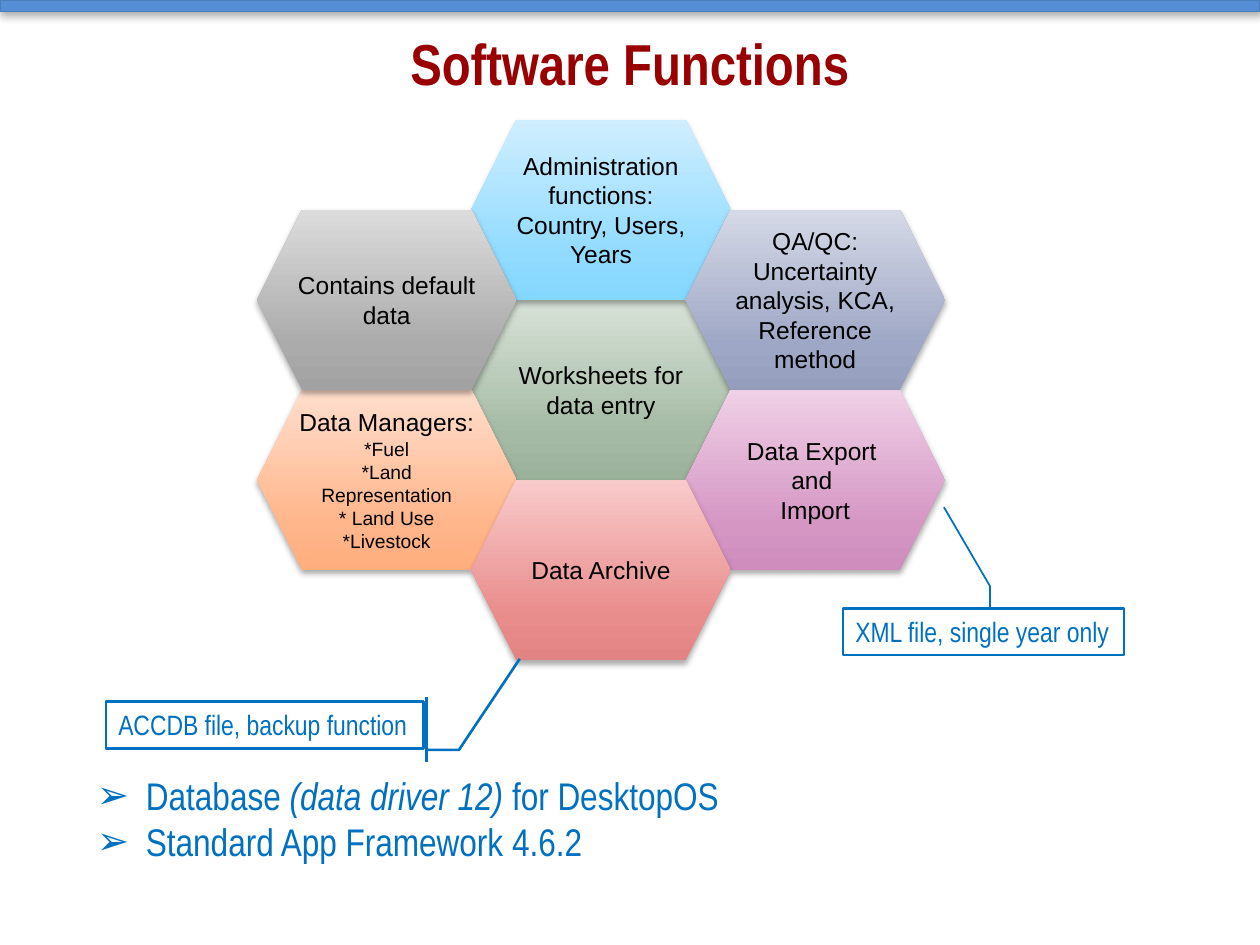
from copy import deepcopy
from dataclasses import dataclass
from typing import Any

from lxml import etree
from pptx import Presentation
from pptx import util as u
from pptx.dml.color import RGBColor
from pptx.enum import shapes, text
from pptx.oxml.ns import qn

PX = 9144  # 100 px to the inch
KIND = shapes.MSO_SHAPE
ALIGN = text.PP_ALIGN


@dataclass(frozen=True)
class Theme:
    title: str = "990002"
    blue: str = "0070C0"
    ink: str = "000000"
    bar: str = "558ED5"
    edge: str = "4A7EBB"
    body: str = "Arial"
    slim: str = "Arial Narrow"
    head: int = 33
    list: int = 22
    tag: int = 16
    cell: int = 14
    small: int = 11


def px(*nums):
    return [u.Emu(round(n * PX)) for n in nums]


def write(frame, paras, align=None, anchor=None, inset=None, bullet=None, **font):
    """Fill a frame; a paragraph is a string or a list of (string, format) runs."""
    if anchor is not None:
        frame.vertical_anchor = anchor
    if inset is not None:
        frame.margin_left = frame.margin_right = inset
        frame.margin_top = frame.margin_bottom = inset
    for i, runs in enumerate(paras):
        para = frame.add_paragraph() if i else frame.paragraphs[0]
        para.alignment = align
        if bullet:
            para.level = 1
            props = para._p.get_or_add_pPr()
            indent = px(39)[0]
            props.set("marL", str(indent))
            props.set("indent", str(-indent))
            etree.SubElement(props, qn("a:buFont")).set("typeface", "Arial")
            etree.SubElement(props, qn("a:buChar")).set("char", bullet)
        for words, extra in [(runs, {})] if isinstance(runs, str) else runs:
            style = {**font, **extra}
            run = para.add_run()
            run.text = words
            run.font.name = style["face"]
            run.font.size = u.Pt(style["size"])
            run.font.color.rgb = RGBColor.from_string(style["color"])
            run.font.bold = style.get("bold", False)
            run.font.italic = style.get("italic", False)


@dataclass
class Page:
    slide: Any
    theme: Theme

    def stroke(self, item, color, width):
        item.line.color.rgb = RGBColor.from_string(color)
        item.line.width = u.Pt(width)

    def shape(self, kind, *box):
        item = self.slide.shapes.add_shape(kind, *px(*box))
        item.shadow.inherit = False
        return item

    def shade(self, item, blur, dist, alpha):
        effects = item._element.spPr.find(qn("a:effectLst"))
        outer = etree.SubElement(effects, qn("a:outerShdw"), blurRad=str(u.Pt(blur)),
                                 dist=str(u.Pt(dist)), dir="5400000", rotWithShape="0")
        color = etree.SubElement(outer, qn("a:srgbClr"), val=self.theme.ink)
        etree.SubElement(color, qn("a:alpha"), val=str(alpha * 1000))

    def bar(self, *box):
        item = self.shape(KIND.RECTANGLE, *box)
        item.fill.solid()
        item.fill.fore_color.rgb = RGBColor.from_string(self.theme.bar)
        self.stroke(item, self.theme.edge, 0.75)
        self.shade(item, 5, 1.8, 35)

    def title(self, words, *box):
        item = self.slide.shapes.title
        item.left, item.top, item.width, item.height = px(*box)
        write(item.text_frame, [words], align=ALIGN.CENTER, anchor=text.MSO_ANCHOR.MIDDLE,
              face=self.theme.slim, size=self.theme.head, color=self.theme.title, bold=True)

    def hexagon(self, box, colors, paras):
        item = self.shape(KIND.HEXAGON, *box)
        item.fill.gradient()
        item.fill.gradient_angle = 90
        stops = item._element.spPr.find(".//" + qn("a:gsLst"))
        stops.append(deepcopy(stops[-1]))
        for stop, color, place in zip(item.fill.gradient_stops, colors, (0, 0.25, 1)):
            stop.color.rgb = RGBColor.from_string(color)
            stop.position = place
        item.line.fill.background()
        self.shade(item, 3.5, 2.2, 32)
        write(item.text_frame, paras, align=ALIGN.CENTER, anchor=text.MSO_ANCHOR.MIDDLE,
              inset=0, face=self.theme.body, size=self.theme.cell, color=self.theme.ink)

    def callout(self, box, turn, width, bends=()):
        item = self.shape(KIND.LINE_CALLOUT_2_ACCENT_BAR, *box)
        item.rotation = turn
        item.fill.background()
        self.stroke(item, self.theme.blue, width)
        for i, bend in enumerate(bends):
            item.adjustments[i] = bend

    def label(self, words, *box):
        item = self.slide.shapes.add_textbox(*px(*box))
        self.stroke(item, self.theme.blue, 1.5)
        item.text_frame.word_wrap = False
        item.text_frame.auto_size = text.MSO_AUTO_SIZE.SHAPE_TO_FIT_TEXT
        write(item.text_frame, [words], face=self.theme.slim,
              size=self.theme.tag, color=self.theme.blue)

    def bullets(self, paras, *box):
        frame = self.slide.shapes.add_textbox(*px(*box)).text_frame
        frame.word_wrap = True
        frame.auto_size = text.MSO_AUTO_SIZE.SHAPE_TO_FIT_TEXT
        write(frame, paras, align=ALIGN.JUSTIFY, bullet="➢", face=self.theme.slim,
              size=self.theme.list, color=self.theme.blue)


def main():
    deck = Presentation()
    deck.slide_width, deck.slide_height = px(1000, 750)
    theme = Theme()
    page = Page(deck.slides.add_slide(deck.slide_layouts[5]), theme)

    # Header
    page.bar(0, 0, 1000, 9)
    page.title("Software Functions", 67, 10, 866, 79)

    # Export callout
    page.callout((669, 585, 209, 39), 90, 1)

    # Honeycomb: column, half-row, gradient, text
    small = {"size": theme.small}
    cells = [
        (1, 2, ("9AB19A", "A4BAA4", "D8E2D8"), ["Worksheets for data entry"]),
        (0, 3, ("FFAE7E", "FFB58A", "FFDECD"),
         [[("Data Managers: ", {}), ("*Fuel", small)], [("*Land Representation", small)],
          [("* Land Use", small)], [("*Livestock", small)]]),
        (1, 0, ("84D7FF", "91DBFF", "CFEEFF"),
         ["Administration functions: Country, Users, Years"]),
        (2, 1, ("959EBD", "9EA7C5", "D5D9E7"),
         ["QA/QC: Uncertainty analysis, KCA, Reference method"]),
        (2, 3, ("CE8DBD", "D596C4", "EFD0E6"), ["Data Export ", "and ", "Import"]),
        (1, 4, ("E38484", "E98C8C", "F9CACA"), ["Data Archive"]),
        (0, 1, ("A2A2A2", "ABABAB", "DCDCDC"), ["Contains default data"]),
    ]
    wide, high, step = 206, 143, 170
    for col, row, colors, paras in cells:
        box = (204 + col * step, 95 + row * high / 2, wide, high)
        page.hexagon(box, colors, paras)

    # File labels and archive callout
    page.label("ACCDB file, backup function", 84, 557, 252, 37)
    page.callout((32, 553, 284, 52), 180, 1.5, (0.19, -0.08, 0.19, -0.17, 1.58, -0.34))
    page.label("XML file, single year only", 669, 483, 223, 37)

    # Requirements
    page.bullets([
        [("Database", {}), (" (data driver 12) ", {"italic": True}), ("for DesktopOS", {})],
        "Standard App Framework 4.6.2",
    ], 67, 608, 866, 84)

    deck.save("out.pptx")


if __name__ == "__main__":
    main()
